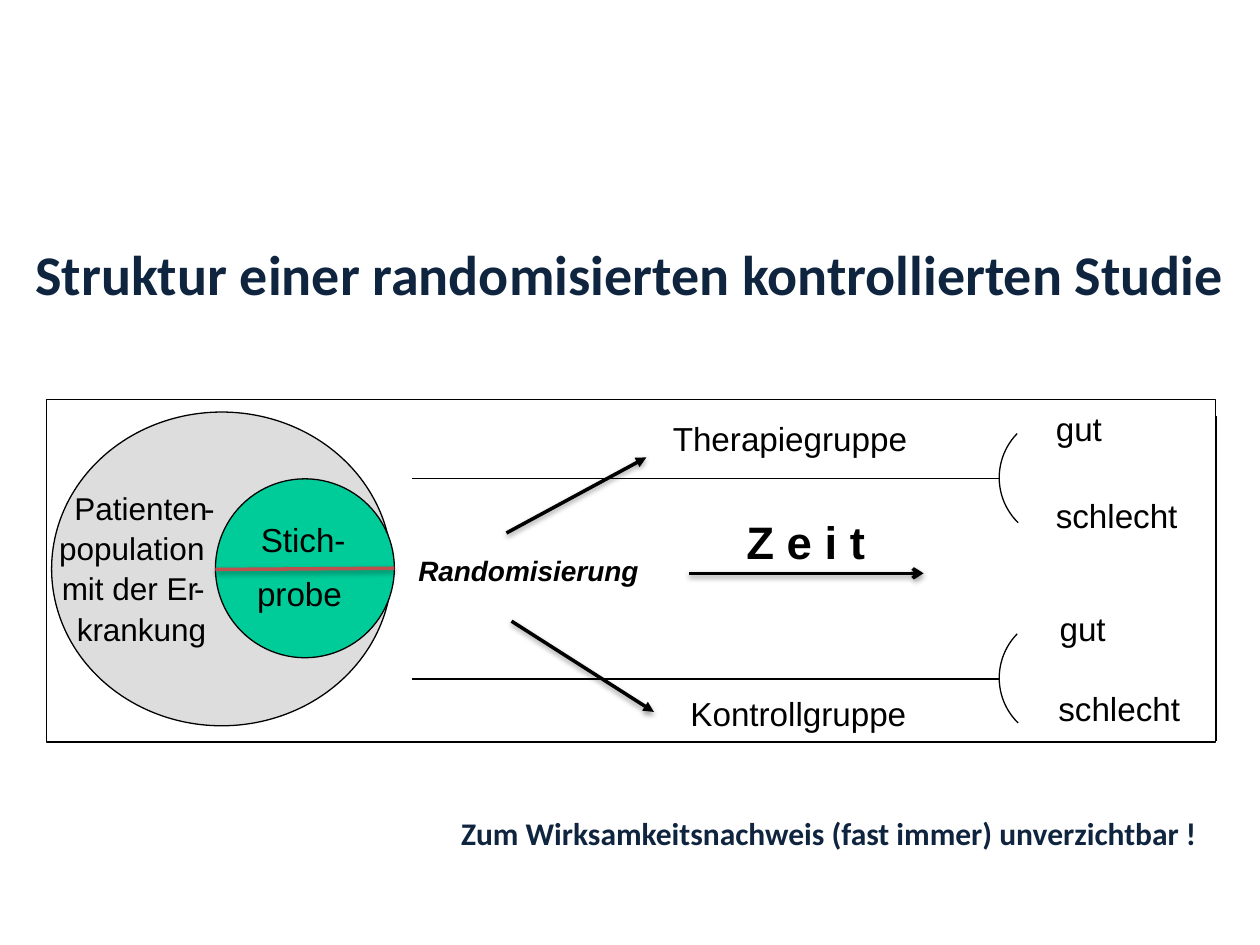
"""Builds a slide on the structure of a randomised controlled trial."""
import dataclasses
import typing

import lxml.etree
import pptx
import pptx.dml.color
import pptx.enum.shapes
import pptx.enum.text
import pptx.oxml.ns
import pptx.util

Inches = pptx.util.Inches
Pt = pptx.util.Pt
KINDS = pptx.enum.shapes.MSO_SHAPE
ALIGN = pptx.enum.text.PP_ALIGN
FIT = pptx.enum.text.MSO_AUTO_SIZE.SHAPE_TO_FIT_TEXT
QN = pptx.oxml.ns.qn
HUES = {"black": "000000", "navy": "0F243E", "grey": "DDDDDD",
        "green": "00CC99", "red": "C0504D"}


@dataclasses.dataclass
class Label:
    """A piece of text with its box and style."""
    text: str
    left: float
    top: float
    width: float
    height: float
    size: float = 19
    font: str = "Arial"
    hue: str = "black"
    bold: bool = False
    slant: bool = False
    mid: bool = False
    wrap: bool = False
    inset: float = 0


@dataclasses.dataclass
class Line:
    """A straight line, with a shadow when it is thick."""
    start: tuple[float, float]
    end: tuple[float, float]
    weight: float = 0.75
    hue: str = "black"
    head: str = ""


@dataclasses.dataclass
class Form:
    """A preset shape with a thin black outline."""
    kind: typing.Any
    left: float
    top: float
    width: float
    height: float
    fill: str = ""
    turn: float = 0


def get_hue(name: str) -> pptx.dml.color.RGBColor:
    """Return the named colour."""
    return pptx.dml.color.RGBColor.from_string(HUES[name])


def add_node(base: typing.Any, tag: str, **attrs: str) -> typing.Any:
    """Append one XML element."""
    return lxml.etree.SubElement(base, QN(tag), attrs)


def set_box(shape: typing.Any, item: typing.Any) -> None:
    """Place a shape where its item says."""
    shape.left, shape.top = Inches(item.left), Inches(item.top)
    shape.width, shape.height = Inches(item.width), Inches(item.height)


def write(shape: typing.Any, label: Label) -> None:
    """Fill a text shape with its label."""
    set_box(shape, label)
    frame = shape.text_frame
    frame.margin_left = frame.margin_right = Inches(label.inset)
    frame.margin_top = frame.margin_bottom = Inches(label.inset / 2)
    frame.word_wrap = label.wrap
    frame.auto_size = FIT
    para = frame.paragraphs[0]
    para.alignment = ALIGN.CENTER if label.mid else ALIGN.LEFT
    run = para.add_run()
    run.text = label.text
    run.font.name, run.font.size = label.font, Pt(label.size)
    run.font.bold, run.font.italic = label.bold, label.slant
    run.font.color.rgb = get_hue(label.hue)


def add_label(slide: typing.Any, label: Label) -> None:
    """Draw a text box."""
    write(slide.shapes.add_textbox(0, 0, 0, 0), label)


def add_form(slide: typing.Any, form: Form) -> None:
    """Draw a preset shape."""
    shape = slide.shapes.add_shape(form.kind, 0, 0, 0, 0)
    set_box(shape, form)
    shape.rotation = form.turn
    shape.shadow.inherit = False
    if form.fill:
        shape.fill.solid()
        shape.fill.fore_color.rgb = get_hue(form.fill)
    else:
        shape.fill.background()
    shape.line.color.rgb = get_hue("black")
    shape.line.width = Pt(0.75)


def add_line(slide: typing.Any, line: Line) -> None:
    """Draw a line or an arrow."""
    ends = [Inches(n) for n in (*line.start, *line.end)]
    shape = slide.shapes.add_connector(
        pptx.enum.shapes.MSO_CONNECTOR.STRAIGHT, *ends)
    shape.line.color.rgb = get_hue(line.hue)
    shape.line.width = Pt(line.weight)
    props = shape._element.spPr
    if line.head:
        add_node(props.find(QN("a:ln")), "a:tailEnd", type=line.head)
    effect = add_node(props, "a:effectLst")
    if line.weight > 1:
        shade = add_node(effect, "a:outerShdw", blurRad="40000",
                         dist="20000", dir="5400000", rotWithShape="0")
        tint = add_node(shade, "a:srgbClr", val=HUES["black"])
        add_node(tint, "a:alpha", val="38000")


TITLE = Label("Struktur einer randomisierten kontrollierten Studie",
              0.14, 1.85, 9.72, 0.64, 32, "Calibri", "navy",
              bold=True, mid=True, inset=0.1)
FORMS = [
    Form(KINDS.RECTANGLE, 0.37, 3.17, 9.28, 2.72),
    Form(KINDS.OVAL, 0.41, 3.27, 2.7, 2.49, "grey"),
    Form(KINDS.OVAL, 1.71, 3.8, 1.42, 1.42, "green"),
    *[Form(KINDS.ARC, 7.93, top, 1, 1, turn=224.4) for top in (3.29, 4.88)],
]
LABELS = [
    Label("Zum Wirksamkeitsnachweis (fast immer) unverzichtbar !",
          3.55, 6.41, 6.06, 0.4, 18, "Calibri", "navy",
          bold=True, mid=True, wrap=True, inset=0.1),
    *[Label(text, left, 3.88 + 0.32 * row, width, 0.34, 18)
      for text, left, row, width in [
          ("Patienten", 0.59, 0, 1.16), ("-", 1.62, 0, 0.19),
          ("population", 0.47, 1, 1.26),
          ("mit der Er", 0.49, 2, 1.19), ("-", 1.54, 2, 0.19),
          ("krankung", 0.61, 3, 1.14)]],
    Label("Stich-", 2.07, 4.12, 0.68, 0.32),
    Label("probe", 2.04, 4.55, 0.79, 0.35),
    Label("Z e i t", 5.92, 4.08, 0.95, 0.44, 26, bold=True, mid=True),
    Label("Therapiegruppe", 5.34, 3.32, 1.97, 0.35),
    Label("Kontrollgruppe", 5.48, 5.5, 1.82, 0.35),
    Label("gut", 8.38, 3.24, 0.48, 0.35),
    Label("schlecht", 8.38, 3.93, 1.08, 0.35),
    Label("gut", 8.41, 4.83, 0.48, 0.35),
    Label("schlecht", 8.4, 5.46, 1.08, 0.35),
    Label("Randomisierung", 3.32, 4.39, 1.77, 0.27, 16,
          bold=True, slant=True),
]
LINES = [
    Line((9.65, 3.3), (9.65, 5.88)),
    *[Line((3.27, y), (7.93, y)) for y in (3.8, 5.39)],
    Line((5.47, 4.55), (7.33, 4.55), 2, head="arrow"),
    Line((4.02, 4.23), (5.13, 3.63), 2, head="triangle"),
    Line((4.06, 4.93), (5.19, 5.65), 2, head="triangle"),
    Line((1.71, 4.52), (3.13, 4.51), 2, "red"),
]


def main() -> None:
    """Build and save the slide."""
    deck = pptx.Presentation()
    deck.slide_width, deck.slide_height = Inches(10), Inches(7.5)
    slide = deck.slides.add_slide(deck.slide_layouts[5])
    write(slide.shapes.title, TITLE)
    for form in FORMS:
        add_form(slide, form)
    for label in LABELS:
        add_label(slide, label)
    for line in LINES:
        add_line(slide, line)
    deck.save("out.pptx")


if __name__ == "__main__":
    main()
